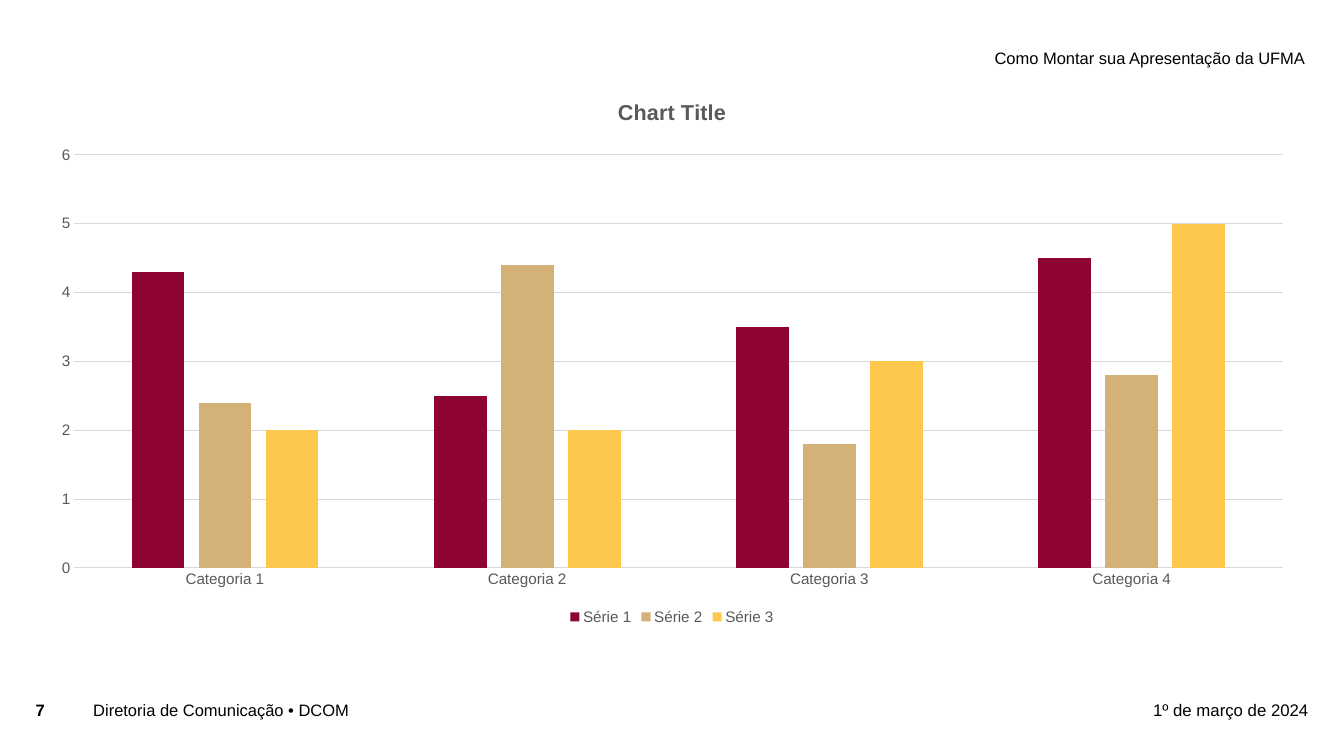
import dataclasses

import pptx
import pptx.chart.data
import pptx.dml.color
import pptx.enum.chart
import pptx.enum.text
import pptx.oxml
import pptx.oxml.ns
import pptx.util

ALIGN = pptx.enum.text.PP_ALIGN


@dataclasses.dataclass(frozen=True)
class Theme:
    font: str = "Arial"
    ink: str = "000000"
    muted: str = "595959"
    rule: str = "D9D9D9"
    series: tuple = ("8D0333", "D4B277", "FEC84D")
    body: float = 13
    date: float = 13.2
    chart_title: float = 17
    label: float = 12
    hairline: float = 0.75


THEME = Theme()

# Grid: 21 columns between the side margins, rows one text line high
WIDTH, HEIGHT = 14.7, 8.27
LEFT, TOP = 0.39, 0.44
COLUMNS, ROW = 21, 0.41
COLUMN = (WIDTH - 2 * LEFT) / COLUMNS
FOOTER_ROW = 17.37

CATEGORIES = [f"Categoria {n}" for n in range(1, 5)]
SERIES = {
    "Série 1": (4.3, 2.5, 3.5, 4.5),
    "Série 2": (2.4, 4.4, 1.8, 2.8),
    "Série 3": (2, 2, 3, 5),
}
PLOT_AREA = {"x": 0.03, "y": 0.14, "w": 0.95, "h": 0.75}


def grid_box(col, row, cols, rows):
    """Turn grid cells into left, top, width and height."""
    sizes = (LEFT + col * COLUMN, TOP + row * ROW, cols * COLUMN, rows * ROW)
    return [pptx.util.Inches(v) for v in sizes]


def rgb(value):
    return pptx.dml.color.RGBColor.from_string(value)


def style_font(font, size, color, bold=False):
    font.name = THEME.font
    font.size = pptx.util.Pt(size)
    font.bold = bold
    font.color.rgb = rgb(color)


def write_line(sp, text, size=THEME.body, bold=False, align=ALIGN.LEFT,
               inset_left=0, inset_right=0):
    tf = sp.text_frame
    tf.word_wrap = True
    tf.auto_size = pptx.enum.text.MSO_AUTO_SIZE.NONE
    tf.vertical_anchor = pptx.enum.text.MSO_ANCHOR.MIDDLE
    tf.margin_top = tf.margin_bottom = 0
    tf.margin_left = pptx.util.Inches(inset_left)
    tf.margin_right = pptx.util.Inches(inset_right)
    p = tf.paragraphs[0]
    p.alignment = align
    r = p.add_run()
    r.text = text
    style_font(r.font, size, THEME.ink, bold)
    return p


def add_title(s, text):
    sp = s.shapes.title
    sp.left, sp.top, sp.width, sp.height = grid_box(0, 0, COLUMNS, 1)
    p = write_line(sp, text, align=ALIGN.RIGHT,
                   inset_left=0.04, inset_right=0.04)
    p.line_spacing = 0.9


def add_footer(s, col, cols, text, **style):
    sp = s.shapes.add_textbox(*grid_box(col, FOOTER_ROW, cols, 1))
    write_line(sp, text, **style)


def style_axis(axis):
    axis.major_tick_mark = pptx.enum.chart.XL_TICK_MARK.NONE
    axis.minor_tick_mark = pptx.enum.chart.XL_TICK_MARK.NONE
    style_font(axis.tick_labels.font, THEME.label, THEME.muted)


def style_rule(line):
    line.color.rgb = rgb(THEME.rule)
    line.width = pptx.util.Pt(THEME.hairline)


def place_plot(chart):
    """Fix the inner plot area as shares of the chart's size."""
    plot_area = chart.plots[0]._element.getparent()
    for old in plot_area.findall(pptx.oxml.ns.qn("c:layout")):
        plot_area.remove(old)
    shares = "".join(f'<c:{k} val="{v}"/>' for k, v in PLOT_AREA.items())
    plot_area.insert(0, pptx.oxml.parse_xml(
        f'<c:layout {pptx.oxml.ns.nsdecls("c")}><c:manualLayout>'
        '<c:layoutTarget val="inner"/><c:xMode val="edge"/>'
        f'<c:yMode val="edge"/>{shares}</c:manualLayout></c:layout>'))


def add_column_chart(s, title):
    data = pptx.chart.data.CategoryChartData()
    data.categories = CATEGORIES
    for name, values in SERIES.items():
        data.add_series(name, values)
    kind = pptx.enum.chart.XL_CHART_TYPE.COLUMN_CLUSTERED
    chart = s.shapes.add_chart(
        kind, *grid_box(0, 1, COLUMNS, 14.7), data).chart
    style_font(chart.font, 10, THEME.ink)

    # Chart title
    chart.has_title = True
    chart.chart_title.include_in_layout = False
    r = chart.chart_title.text_frame.paragraphs[0].add_run()
    r.text = title
    style_font(r.font, THEME.chart_title, THEME.muted, bold=True)

    # Columns
    plot = chart.plots[0]
    plot.gap_width, plot.overlap = 219, -27
    plot.vary_by_categories = False
    for series, color in zip(plot.series, THEME.series):
        series.format.fill.solid()
        series.format.fill.fore_color.rgb = rgb(color)
        series.invert_if_negative = False

    # Axes
    style_axis(chart.category_axis)
    style_rule(chart.category_axis.format.line)
    axis = chart.value_axis
    style_axis(axis)
    axis.minimum_scale, axis.maximum_scale, axis.major_unit = 0, 6, 1
    axis.format.line.fill.background()
    style_rule(axis.major_gridlines.format.line)

    # Legend
    chart.has_legend = True
    chart.legend.position = pptx.enum.chart.XL_LEGEND_POSITION.BOTTOM
    chart.legend.include_in_layout = False
    style_font(chart.legend.font, THEME.label, THEME.muted)
    place_plot(chart)


def main():
    prs = pptx.Presentation()
    prs.slide_width = pptx.util.Inches(WIDTH)
    prs.slide_height = pptx.util.Inches(HEIGHT)
    s = prs.slides.add_slide(prs.slide_layouts.get_by_name("Title Only"))

    add_title(s, "Como Montar sua Apresentação da UFMA")

    # Footer: department, page number, date
    add_footer(s, 0.95, 9.53, "Diretoria de Comunicação • DCOM")
    add_footer(s, 0, 0.95, "7", bold=True, inset_right=0.1)
    add_footer(s, 16, 5, "1º de março de 2024",
               size=THEME.date, align=ALIGN.RIGHT)

    add_column_chart(s, "Chart Title")
    prs.save("out.pptx")


if __name__ == "__main__":
    main()
